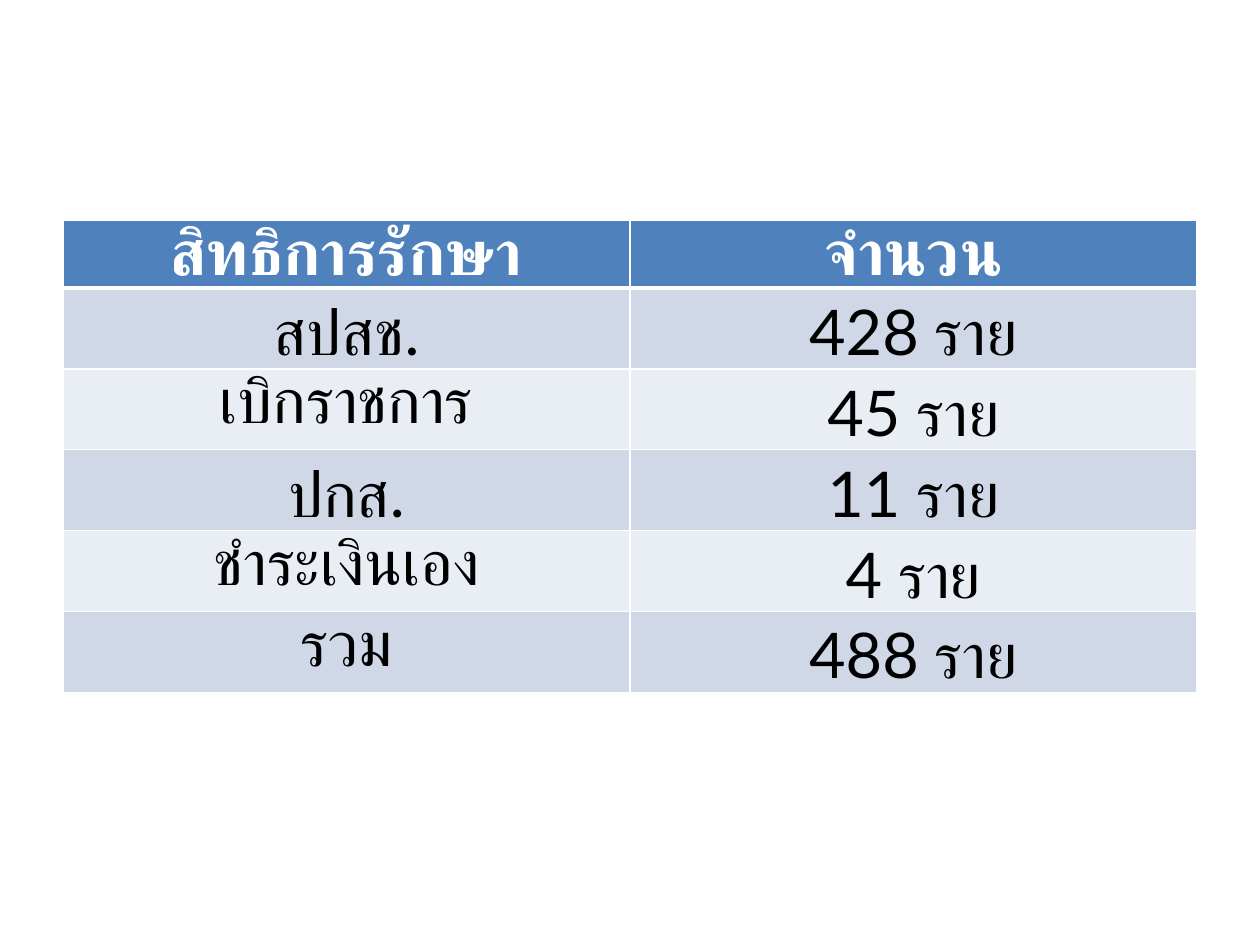
from lxml import etree
from pptx import Presentation
from pptx.dml.color import RGBColor
from pptx.enum.text import PP_ALIGN
from pptx.oxml.ns import qn
from pptx.util import Inches, Pt

CENTER = PP_ALIGN.CENTER
WHITE = RGBColor(0xFF, 0xFF, 0xFF)
BLACK = RGBColor(0, 0, 0)
BLUE = RGBColor(0x4F, 0x81, 0xBD)
BANDS = RGBColor(0xE9, 0xED, 0xF4), RGBColor(0xD0, 0xD8, 0xE8)
THAI, LATIN = "Calibri", "Lato"

# Each cell is a list of (text, font) runs.
ROWS = [
    ([("สิทธิการรักษา", THAI)], [("จำนวน", THAI)]),
    ([("สปสช", THAI), (".", LATIN)], [("428 ราย", LATIN)]),
    ([("เบิกราชการ", THAI)], [("45 ราย", LATIN)]),
    ([("ปกส", THAI), (".", LATIN)], [("11 ราย", LATIN)]),
    ([("ชำระเงินเอง", THAI)], [("4 ราย", LATIN)]),
    ([("รวม", THAI)], [("488 ราย", LATIN)]),
]
WIDTH, HEIGHT = 10, 7.5
LEFT, TOP = 0.05 * WIDTH, 1.75
HEAD, BODY = 0.53, 0.64


def add_border(cell, side, width):
    props = cell._tc.get_or_add_tcPr()
    line = etree.SubElement(props, qn(f"a:ln{side}"), w=str(Pt(width)))
    fill = etree.SubElement(line, qn("a:solidFill"))
    etree.SubElement(fill, qn("a:srgbClr"), val=str(WHITE))


def fill_cell(cell, runs, row):
    head = row == 0
    for side in "LRTB":
        thick = (head and side == "B") or (row == 1 and side == "T")
        add_border(cell, side, 3 if thick else 1)
    cell.fill.solid()
    cell.fill.fore_color.rgb = BLUE if head else BANDS[row % 2]
    cell.margin_left = cell.margin_right = Inches(0.07)
    cell.margin_top = cell.margin_bottom = 0
    para = cell.text_frame.paragraphs[0]
    para.alignment = CENTER
    para.line_spacing = 1.07
    for text, face in runs:
        run = para.add_run()
        run.text = text
        font = run.font
        font.name, font.size, font.bold = face, Pt(36), head
        font.color.rgb = WHITE if head else BLACK


def main():
    deck = Presentation()
    deck.slide_width, deck.slide_height = Inches(WIDTH), Inches(HEIGHT)
    slide = deck.slides.add_slide(deck.slide_layouts[6])
    tall = HEAD + BODY * (len(ROWS) - 1)
    frame = slide.shapes.add_table(
        len(ROWS), len(ROWS[0]), Inches(LEFT), Inches(TOP),
        Inches(WIDTH - 2 * LEFT), Inches(tall))
    table = frame.table
    for row, cells in enumerate(ROWS):
        table.rows[row].height = Inches(BODY if row else HEAD)
        for col, runs in enumerate(cells):
            fill_cell(table.cell(row, col), runs, row)
    deck.save("out.pptx")


if __name__ == "__main__":
    main()
